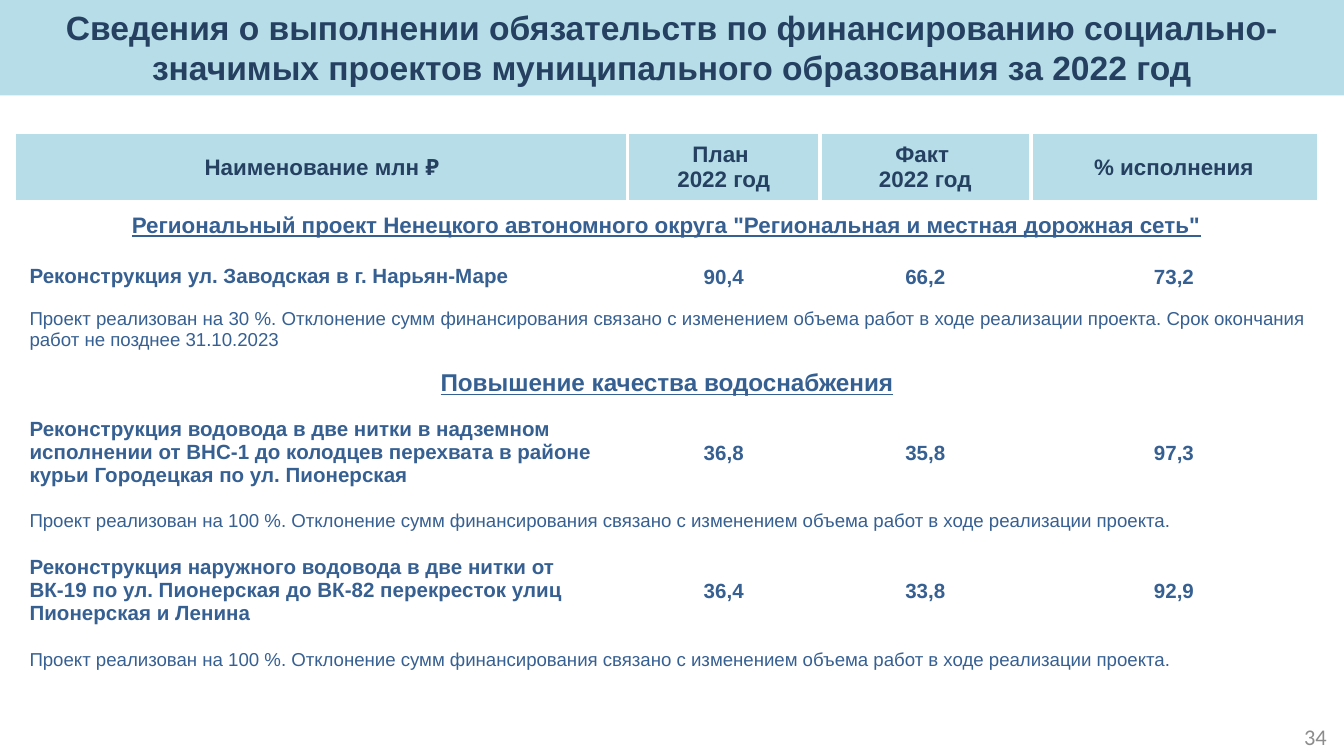
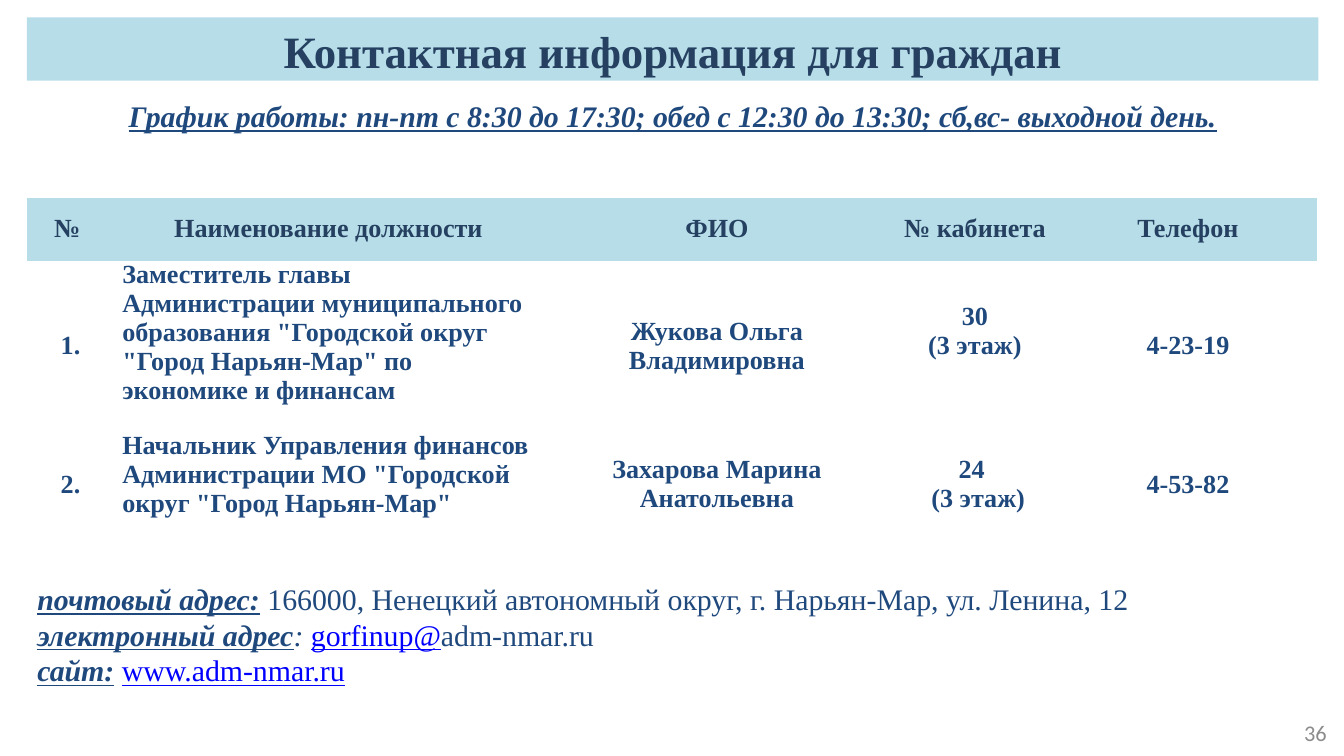
from dataclasses import dataclass, field
from typing import NamedTuple

from lxml import etree
from pptx import Presentation, util as u
from pptx.dml.color import RGBColor
from pptx.enum import shapes, text
from pptx.oxml import ns

WIDE = u.Inches(10)
HIGH = u.Emu(WIDE * 9 // 16)
COLS, ROWS = 100, 56.25
BAND, DARK, BLUE, NAVY = "B7DEE8", "254061", "376092", "1F497D"
LINK, GRAY, WHITE = "0000FF", "8C8C8C", "FFFFFF"
SANS, SERIF, PLAIN = "Arial", "Times New Roman", "Calibri"
BARE = "{2D5ABB26-0587-4C30-8999-92F81FD0307C}"
LEFT, MID = text.PP_ALIGN.LEFT, text.PP_ALIGN.CENTER
RIGHT, JUST = text.PP_ALIGN.RIGHT, text.PP_ALIGN.JUSTIFY
TOP, HALF = text.MSO_ANCHOR.TOP, text.MSO_ANCHOR.MIDDLE


class Box(NamedTuple):
    x: float
    y: float
    w: float
    h: float


class Run(NamedTuple):
    text: str
    form: dict = {}


@dataclass
class Cell:
    lines: list
    form: dict = field(default_factory=dict)
    fill: str = ""
    span: int = 1
    sides: str = ""


def across(n: float) -> int:
    return round(WIDE * n / COLS)


def down(n: float) -> int:
    return round(HIGH * n / ROWS)


def place(box: Box) -> tuple:
    return across(box.x), down(box.y), across(box.w), down(box.h)


def paint(fill, tone: str) -> None:
    if tone:
        fill.solid()
        fill.fore_color.rgb = RGBColor.from_string(tone)
    else:
        fill.background()


def style(font, size=12, face=SANS, tone=NAVY, bold=False, slant=False, under=False) -> None:
    font.size, font.name = u.Pt(size), face
    font.bold, font.italic, font.underline = bold, slant, under
    font.color.rgb = RGBColor.from_string(tone)


def write(frame, lines: list, align=LEFT, **form) -> None:
    frame.word_wrap = True
    for n, line in enumerate(lines):
        para = frame.paragraphs[0] if n == 0 else frame.add_paragraph()
        para.alignment = align
        for part in [Run(line)] if isinstance(line, str) else line:
            run = para.add_run()
            run.text = part.text
            style(run.font, **{**form, **part.form})


def label(slide, box: Box, lines: list, anchor=TOP, **form) -> None:
    frame = slide.shapes.add_textbox(*place(box)).text_frame
    frame.vertical_anchor = anchor
    write(frame, lines, **form)


def title(slide, box: Box, words: str, **form) -> None:
    band = slide.shapes.add_shape(shapes.MSO_SHAPE.RECTANGLE, *place(box))
    band.shadow.inherit = False
    paint(band.fill, BAND)
    band.line.fill.background()
    band.text_frame.vertical_anchor = TOP
    write(band.text_frame, [words], align=MID, tone=DARK, bold=True, **form)


def number(slide, y: float, page: int) -> None:
    label(slide, Box(76.4, y, 23.3, 3), [str(page)], anchor=HALF,
          align=RIGHT, size=12, face=PLAIN, tone=GRAY)


def edge(cell, sides: str) -> None:
    props = cell._tc.get_or_add_tcPr()
    for n, side in enumerate(sides):
        line = etree.Element(ns.qn(f"a:ln{side}"), w=str(u.Pt(2.25)))
        solid = etree.SubElement(line, ns.qn("a:solidFill"))
        etree.SubElement(solid, ns.qn("a:srgbClr"), val=WHITE)
        props.insert(n, line)


def fill_in(cell, data: Cell, base: dict) -> None:
    form = {**base, **data.form}
    cell.vertical_anchor = form.pop("anchor", HALF)
    left, top, right, foot = form.pop("inset", (1, 0.5, 1, 0.5))
    cell.margin_left, cell.margin_right = across(left), across(right)
    cell.margin_top, cell.margin_bottom = down(top), down(foot)
    write(cell.text_frame, data.lines, **form)
    paint(cell.fill, data.fill)
    edge(cell, data.sides)


def grid(slide, box: Box, cols: list, rows: list, data: list, **base) -> None:
    frame = slide.shapes.add_table(len(rows), len(cols), *place(box))
    table = frame.table
    table.first_row = table.horz_banding = False
    for mark in frame.element.iter(ns.qn("a:tableStyleId")):
        mark.text = BARE
    for n, wide in enumerate(cols):
        table.columns[n].width = across(wide)
    for r, high in enumerate(rows):
        table.rows[r].height = down(high)
        for c, item in enumerate(data[r]):
            cell = table.cell(r, c)
            if item.span > 1:
                cell.merge(table.cell(r, c + item.span - 1))
            fill_in(cell, item, base)


def theme(words: str, size: float) -> list:
    return [Cell([words], dict(size=size, under=True, align=MID), span=4)]


def note(words: str, align=LEFT) -> list:
    return [Cell([words], dict(size=10, bold=False, align=align), span=4)]


def work(name: str, *sums: str) -> list:
    form = dict(align=MID, inset=(0.1, 0.1, 0.1, 0))
    return [Cell([name])] + [Cell([s], form) for s in sums]


def funds(slide) -> None:
    title(slide, Box(0, 0, 100, 7.1),
          "Сведения о выполнении обязательств по финансированию "
          "социально-значимых проектов муниципального образования за 2022 год",
          size=18, face=SANS)
    form = dict(size=12, tone=DARK, align=MID, inset=(1, 0.4, 1, 0.4))
    heads = [(["Наименование млн ₽"], "R"), (["План ", "2022 год"], "LR"),
             (["Факт ", "2022 год"], "LR"), (["% исполнения"], "L")]
    done = ("Проект реализован на 100 %. Отклонение сумм финансирования "
            "связано с изменением объема работ в ходе реализации проекта.")
    data = [
        [Cell(lines, form, BAND, sides=sides) for lines, sides in heads],
        theme('Региональный проект Ненецкого автономного округа '
              '"Региональная и местная дорожная сеть"', 12),
        work("Реконструкция ул. Заводская в г. Нарьян-Маре", "90,4", "66,2", "73,2"),
        note("Проект реализован на 30 %. Отклонение сумм финансирования связано "
             "с изменением объема работ в ходе реализации проекта. "
             "Срок окончания работ не позднее 31.10.2023", JUST),
        theme("Повышение качества водоснабжения", 13),
        work("Реконструкция водовода в две нитки в надземном исполнении от ВНС-1 "
             "до колодцев перехвата в районе курьи Городецкая по ул. Пионерская",
             "36,8", "35,8", "97,3"),
        note(done),
        work("Реконструкция наружного водовода в две нитки от ВК-19 по "
             "ул. Пионерская до ВК-82 перекресток улиц Пионерская и Ленина",
             "36,4", "33,8", "92,9"),
        note(done),
    ]
    grid(slide, Box(1.2, 10, 96.9, 41), [45.5, 14.3, 15.7, 21.3],
         [4.9] + [3.8] * 4 + [6.5, 3.8] * 2, data,
         size=11, face=SANS, tone=BLUE, bold=True)
    number(slide, 53.3, 34)


def staff(slide) -> None:
    title(slide, Box(2, 1.3, 96.1, 4.7), "Контактная информация для граждан",
          size=24, face=SERIF)
    heads = ["№ ", "Наименование должности", "ФИО", "№ кабинета", "Телефон"]
    post = dict(align=LEFT, anchor=TOP)
    data = [
        [Cell([h], dict(tone=DARK), BAND) for h in heads],
        [Cell(["1."]),
         Cell(['Заместитель главы Администрации муниципального образования '
               '"Городской округ "Город Нарьян-Мар" по экономике и финансам'], post),
         Cell(["Жукова Ольга Владимировна"]),
         Cell(["30", "(3 этаж)"], dict(inset=(0.6, 0, 0.6, 2.2))),
         Cell(["4-23-19"])],
        [Cell(["2."]),
         Cell(['Начальник Управления финансов Администрации МО '
               '"Городской округ "Город Нарьян-Мар"'], post),
         Cell(["Захарова Марина Анатольевна"]),
         Cell(["24 ", " (3 этаж)"]),
         Cell(["4-53-82"])],
    ]
    grid(slide, Box(2, 14.7, 96.1, 25.3), [6.5, 31.9, 25.9, 12.5, 19.2],
         [4.7, 12.7, 7.9], data, size=14, face=SERIF, tone=NAVY, bold=True,
         align=MID, inset=(0.6, 0, 0.6, 0))
    key = dict(bold=True, slant=True, under=True)
    link = dict(tone=LINK, under=True)
    label(slide, Box(1.8, 42.7, 96.1, 9.1), [
        [Run("почтовый адрес:", key), Run(" ", dict(bold=True, slant=True)),
         Run("166000, Ненецкий автономный округ, г. Нарьян-Мар, ул. Ленина, 12")],
        [Run("электронный адрес", key), Run(": ", dict(slant=True)),
         Run("gorfinup@", link), Run("adm-nmar.ru")],
        [Run("сайт:", key), Run(" "), Run("www.adm-nmar.ru", link)],
    ], size=16, face=SERIF)
    label(slide, Box(2, 6.8, 96.1, 6.4),
          ["График работы: пн-пт с 8:30 до 17:30; обед с 12:30 до 13:30; "
           "сб,вс- выходной день."], align=MID, size=16, face=SERIF, **key)
    number(slide, 53, 36)


def main() -> None:
    deck = Presentation()
    deck.slide_width, deck.slide_height = WIDE, HIGH
    for build in (funds, staff):
        build(deck.slides.add_slide(deck.slide_layouts[6]))
    deck.save("out.pptx")


if __name__ == "__main__":
    main()
